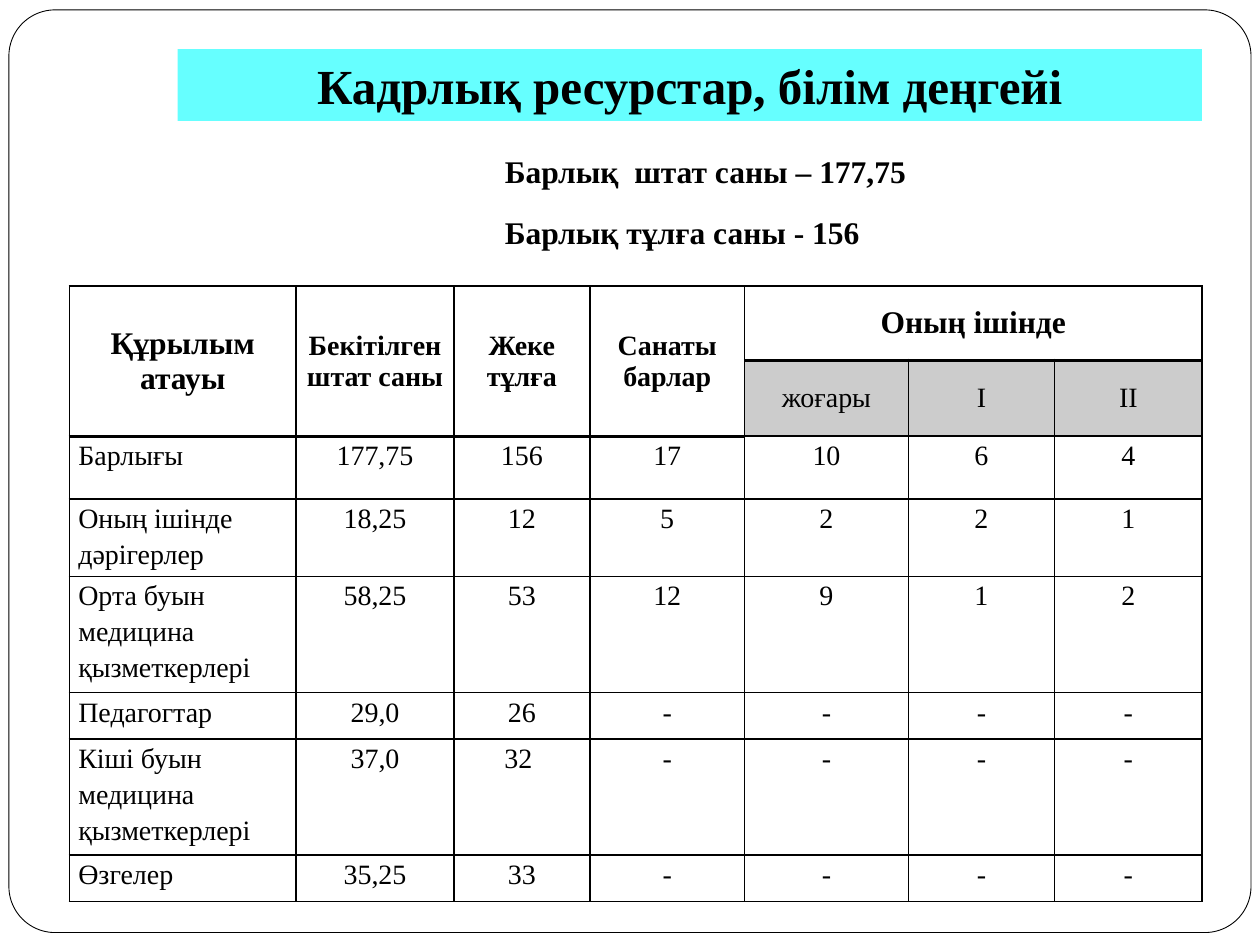
from lxml.etree import SubElement as Sub
from pptx import Presentation
from pptx.dml.color import RGBColor as Rgb
from pptx.enum.shapes import MSO_SHAPE as Kind
from pptx.enum.text import MSO_ANCHOR as Anchor, PP_ALIGN as Align
from pptx.oxml.ns import qn
from pptx.util import Cm, Pt

FONT = "Times New Roman"
HUES = {"ink": "000000", "paper": "FFFFFF", "title": "66FFFF"}
COLS = [4.57, 3.18, 2.74, 3.12, 3.3, 2.95, 2.97]
ROWS = [1.49, 1.53, 1.27, 1.55, 2.34, 0.94, 2.34, 0.94]
HEADS = ["Құрылым\nатауы", "Бекітілген штат саны", "Жеке тұлға", "Санаты барлар"]
RANKS = ["жоғары", "І", "ІІ"]
DATA = [
    ["Барлығы", "177,75", "156", "17", "10", "6", "4"],
    ["Оның ішінде дәрігерлер", "18,25", "12", "5", "2", "2", "1"],
    ["Орта буын медицина қызметкерлері", "58,25", "53", "12", "9", "1", "2"],
    ["Педагогтар", "29,0", "26", "-", "-", "-", "-"],
    ["Кіші буын медицина қызметкерлері", "37,0", "32 ", "-", "-", "-", "-"],
    ["Өзгелер", "35,25", "33", "-", "-", "-", "-"],
]


def hue(name):
    return Rgb.from_string(HUES[name])


def write(frame, text, size, bold=False, align=Align.LEFT, space=None):
    frame.text = text
    for para in frame.paragraphs:
        para.alignment = align
        if space:
            para.line_spacing = space
        for run in para.runs:
            font = run.font
            font.name, font.size, font.bold = FONT, Pt(size), bold
            font.color.rgb = hue("ink")


def add_box(slide, kind, left, top, width, height, fill):
    box = slide.shapes.add_shape(kind, Cm(left), Cm(top), Cm(width), Cm(height))
    box.shadow.inherit = False
    box.fill.solid()
    box.fill.fore_color.rgb = hue(fill)
    box.line.fill.background()
    return box


def add_frame(slide):
    box = add_box(slide, Kind.ROUNDED_RECTANGLE, 0.18, 0.2, 25.04, 18.6, "paper")
    box.adjustments[0] = 0.05
    box.line.color.rgb = hue("ink")
    box.line.width = Pt(0.5)


def add_title(slide, text):
    box = add_box(slide, Kind.RECTANGLE, 3.58, 0.99, 20.65, 1.45, "title")
    write(box.text_frame, text, 28, True, Align.CENTER)


def add_note(slide, top, width, text):
    box = slide.shapes.add_textbox(Cm(9.93), Cm(top), Cm(width), Cm(1.02))
    box.text_frame.word_wrap = False
    write(box.text_frame, text, 18, True)


def edge(cell, base=1):
    props = cell._tc.get_or_add_tcPr()
    for side, width in zip("LRTB", (1, 1, 1, base)):
        line = Sub(props, qn(f"a:ln{side}"), w=str(Pt(width)))
        Sub(Sub(line, qn("a:solidFill")), qn("a:srgbClr"), val=HUES["ink"])


def pad(cell, side):
    cell.margin_left = cell.margin_right = Cm(side)
    cell.margin_top = cell.margin_bottom = 0


def set_head(cell, text, size, bold=True):
    pad(cell, 0.1)
    cell.vertical_anchor = Anchor.MIDDLE
    write(cell.text_frame, text, size, bold, Align.CENTER)


def set_rank(cell, text):
    set_head(cell, text, 16, False)
    cell.fill.solid()
    cell.fill.fore_color.rgb = hue("ink")
    tint = cell._tc.tcPr.find(qn("a:solidFill"))[0]
    Sub(tint, qn("a:alpha"), val="20000")


def set_data(cell, text, align):
    pad(cell, 0.18)
    write(cell.text_frame, text, 16, False, align, 1.15)
    cell.fill.solid()
    cell.fill.fore_color.rgb = hue("paper")


def add_grid(slide):
    shape = slide.shapes.add_table(len(ROWS), len(COLS), Cm(1.4), Cm(5.77),
                                   Cm(sum(COLS)), Cm(sum(ROWS)))
    grid = shape.table
    grid.first_row = grid.horz_banding = False
    for col, width in zip(grid.columns, COLS):
        col.width = Cm(width)
    for row, height in zip(grid.rows, ROWS):
        row.height = Cm(height)

    first = len(HEADS)
    for r in range(len(ROWS)):
        for c in range(len(COLS)):
            cell = grid.cell(r, c)
            thick = r == 0 and c >= first or r < 2 and c < first
            edge(cell, 2 if thick else 1)
            cell.fill.background()

    for c, text in enumerate(HEADS):
        grid.cell(0, c).merge(grid.cell(1, c))
        set_head(grid.cell(0, c), text, 16 if c else 18)
    grid.cell(0, first).merge(grid.cell(0, len(COLS) - 1))
    set_head(grid.cell(0, first), "Оның ішінде", 18)
    for c, text in enumerate(RANKS, first):
        set_rank(grid.cell(1, c), text)
    for r, row in enumerate(DATA, 2):
        for c, text in enumerate(row):
            set_data(grid.cell(r, c), text, Align.CENTER if c else Align.LEFT)


def main():
    deck = Presentation()
    deck.slide_width, deck.slide_height = Cm(25.4), Cm(19.05)
    slide = deck.slides.add_slide(deck.slide_layouts[6])
    add_frame(slide)
    add_note(slide, 2.95, 8.69, "Барлық  штат саны – 177,75")
    add_note(slide, 4.17, 7.72, "Барлық тұлға саны - 156")
    add_title(slide, "Кадрлық ресурстар, білім деңгейі")
    add_grid(slide)
    deck.save("out.pptx")


if __name__ == "__main__":
    main()
